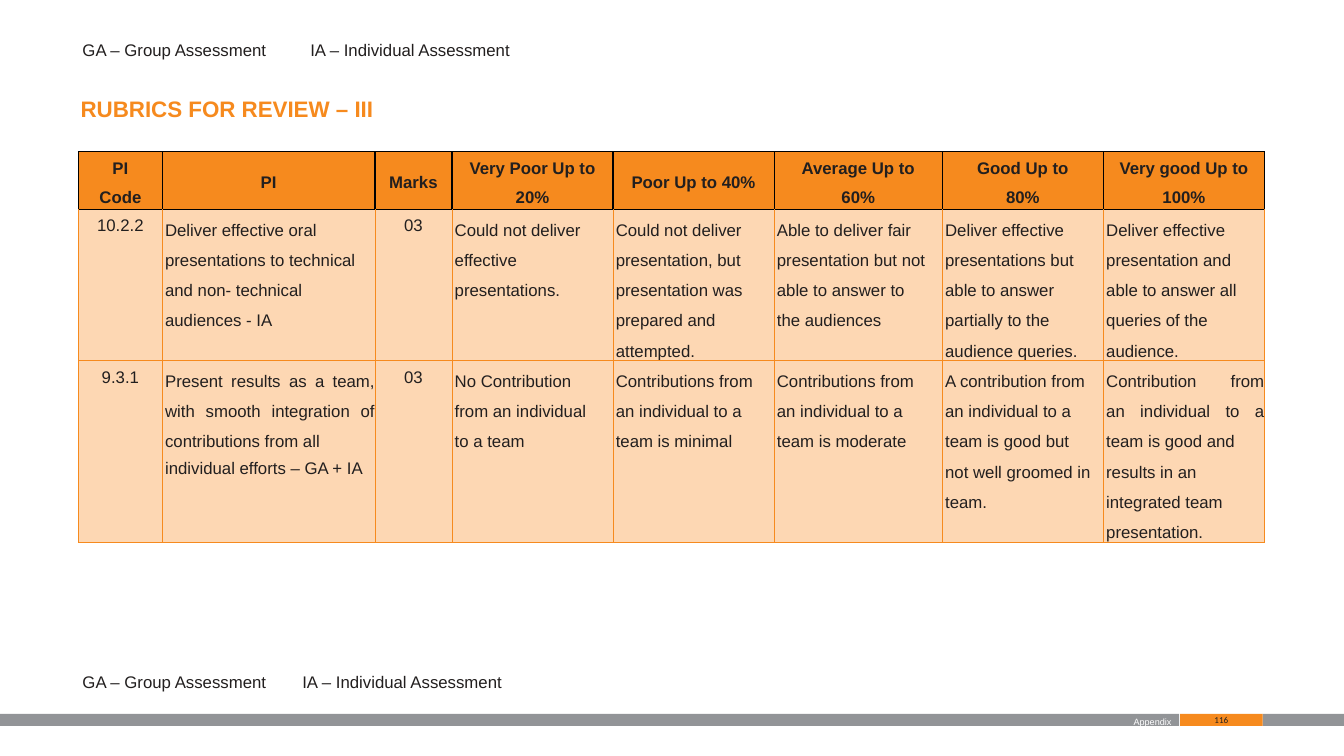
"""Build the slide with the rubrics for the third review."""
from lxml.etree import SubElement
from pptx import Presentation
from pptx.dml.color import RGBColor
from pptx.enum.shapes import MSO_SHAPE
from pptx.enum.text import MSO_ANCHOR, MSO_AUTO_SIZE, PP_ALIGN
from pptx.oxml.ns import qn
from pptx.util import Cm, Pt

ORANGE = RGBColor(0xF6, 0x8A, 0x1E)
PEACH = RGBColor(0xFD, 0xD7, 0xB3)
GREY = RGBColor(0x92, 0x94, 0x97)
INK = RGBColor(0x22, 0x1F, 0x1F)
BLACK = RGBColor(0, 0, 0)
WHITE = RGBColor(0xFF, 0xFF, 0xFF)

TITLE = "RUBRICS FOR REVIEW – III"
GROUP, SOLO = "GA – Group Assessment", "IA – Individual Assessment"
HEADS = [
    ["PI", "Code"], ["PI"], ["Marks"], ["Very Poor Up to", "20%"],
    ["Poor Up to 40%"], ["Average Up to", "60%"], ["Good Up to", "80%"],
    ["Very good Up to", "100%"],
]
BODY = [
    [
        ["10.2.2"],
        ["Deliver effective oral presentations to technical and non- technical audiences - IA"],
        ["03"],
        ["Could not deliver effective presentations."],
        ["Could not deliver presentation, but presentation was prepared and attempted."],
        ["Able to deliver fair presentation but not able to answer to\vthe audiences"],
        ["Deliver effective presentations but able to answer partially to the audience queries."],
        ["Deliver effective presentation and\vable to answer all queries of the audience."],
    ],
    [
        ["9.3.1"],
        ["Present results as a team, with smooth integration of contributions from all",
         "individual efforts – GA + IA"],
        ["03"],
        ["No Contribution\vfrom an individual\vto a team"],
        ["Contributions from\van individual to a team is minimal"],
        ["Contributions from\van individual to a team is moderate"],
        ["A contribution from\van individual to a team is good but", "not well groomed in team."],
        ["Contribution from\van individual to a team is good and",
         "results in an integrated team presentation."],
    ],
]
WIDTHS = [2.11, 5.36, 1.94, 4.06, 4.06, 4.24, 4.06, 4.06]
HEIGHTS = [1.46, 3.8, 4.57]
LEFT, TOP = 1.98, 3.82
SHORT = (0, 2)

NOTES = [
    (GROUP, 2.08, 0.94, 4.8, 12, INK), (SOLO, 7.82, 0.94, 5.2, 12, INK),
    (GROUP, 2.08, 16.87, 4.8, 12, INK), (SOLO, 7.62, 16.87, 5.2, 12, INK),
    ("Appendix", 28.57, 17.99, 1.1, 6.5, WHITE),
]
BARS = [(0, 29.72, GREY, ""), (31.82, 2.05, GREY, ""), (29.74, 2.08, ORANGE, "116")]
BAR_TOP, BAR_HIGH = 17.99, 0.3

FRAME = {"margin_left": 0, "margin_right": 0, "margin_top": Cm(0.06),
         "margin_bottom": 0, "word_wrap": True, "auto_size": MSO_AUTO_SIZE.NONE,
         "vertical_anchor": MSO_ANCHOR.TOP}
CELL = {"margin_left": 0, "margin_right": 0, "margin_top": 0, "margin_bottom": 0,
        "vertical_anchor": MSO_ANCHOR.TOP}
HEAD_TWO = {"alignment": PP_ALIGN.CENTER, "line_spacing": Pt(13.7), "space_before": Pt(7.2)}
CENTRE = {"alignment": PP_ALIGN.CENTER}
LONG = {"alignment": PP_ALIGN.LEFT, "line_spacing": Pt(21.6)}
ODD = {
    (2, 1, 0): {"alignment": PP_ALIGN.JUSTIFY},
    (2, 1, 1): {"line_spacing": 1.0, "space_before": Pt(5.3)},
    (2, 7, 0): {"alignment": PP_ALIGN.JUSTIFY},
}


def put(item, vals):
    """Set each attribute named in the dict."""
    for name, val in vals.items():
        setattr(item, name, val)


def ink(para, size, tint, bold=False, face="Arial"):
    """Format the font of one paragraph and its runs."""
    for part in (para, *para.runs):
        put(part.font, {"size": Pt(size), "bold": bold, "name": face})
        part.font.color.rgb = tint


def edge(cell, sides):
    """Draw the cell borders given as side, colour and points."""
    props = cell._tc.get_or_add_tcPr()
    for side, tint, wide in sides:
        line = SubElement(props, qn(f"a:ln{side}"), w=str(Pt(wide)))
        fill = SubElement(line, qn("a:solidFill"))
        SubElement(fill, qn("a:srgbClr"), val=str(tint))


def fill_cell(cell, row, col, lines):
    """Write and format one cell of the rubric."""
    head, short = row == 0, col in SHORT
    edge(cell, [(side, BLACK, 1) if head or (row == 1 and side == "T")
                else (side, ORANGE, 0.75) for side in "LRTB"])
    cell.fill.solid()
    cell.fill.fore_color.rgb = ORANGE if head else PEACH
    put(cell, CELL)
    if head and len(lines) == 1:
        put(cell, {"vertical_anchor": MSO_ANCHOR.MIDDLE, "margin_top": Cm(0.08)})
    elif head or short:
        cell.margin_top = Cm(0.18)
    else:
        cell.margin_left = Cm(0.07)
    cell.text = "\n".join(lines)
    for num, para in enumerate(cell.text_frame.paragraphs):
        base = CENTRE if head or short else LONG
        put(para, HEAD_TWO if head and num else base)
        put(para, ODD.get((row, col, num), {}))
        ink(para, 12, INK, head)


def add_rubric(slide):
    """Add the table and fill its cells."""
    rows = [HEADS, *BODY]
    table = slide.shapes.add_table(len(rows), len(WIDTHS), Cm(LEFT), Cm(TOP),
                                   Cm(sum(WIDTHS)), Cm(sum(HEIGHTS))).table
    put(table, {"first_row": False, "horz_banding": False})
    for col, wide in zip(table.columns, WIDTHS):
        col.width = Cm(wide)
    for row, high in zip(table.rows, HEIGHTS):
        row.height = Cm(high)
    for row, cells in enumerate(rows):
        for col, lines in enumerate(cells):
            fill_cell(table.cell(row, col), row, col, lines)


def add_bar(slide, left, wide, tint, text):
    """Add one part of the footer bar."""
    bar = slide.shapes.add_shape(MSO_SHAPE.RECTANGLE, Cm(left), Cm(BAR_TOP),
                                 Cm(wide), Cm(BAR_HIGH))
    bar.shadow.inherit = False
    bar.fill.solid()
    bar.fill.fore_color.rgb = tint
    bar.line.fill.background()
    if text:
        frame = bar.text_frame
        put(frame, {**FRAME, "margin_top": 0, "vertical_anchor": MSO_ANCHOR.MIDDLE})
        frame.text = text
        frame.paragraphs[0].alignment = PP_ALIGN.CENTER
        ink(frame.paragraphs[0], 6.5, INK, face="Calibri")


def set_text(shape, text, size, tint, bold=False):
    """Write one left-aligned line into a shape."""
    frame = shape.text_frame
    put(frame, FRAME)
    frame.text = text
    frame.paragraphs[0].alignment = PP_ALIGN.LEFT
    ink(frame.paragraphs[0], size, tint, bold)


def main():
    """Build and save the slide."""
    deck = Presentation()
    put(deck, {"slide_width": Cm(33.87), "slide_height": Cm(19.05)})
    slide = deck.slides.add_slide(deck.slide_layouts[5])
    title = slide.shapes.title
    put(title, {"left": Cm(2.03), "top": Cm(2.34), "width": Cm(8), "height": Cm(0.74)})
    set_text(title, TITLE, 16, ORANGE, True)
    for bar in BARS:
        add_bar(slide, *bar)
    add_rubric(slide)
    for text, left, top, wide, size, tint in NOTES:
        box = slide.shapes.add_textbox(Cm(left), Cm(top), Cm(wide), Cm(size * 0.05))
        set_text(box, text, size, tint)
    deck.save("out.pptx")


if __name__ == "__main__":
    main()
